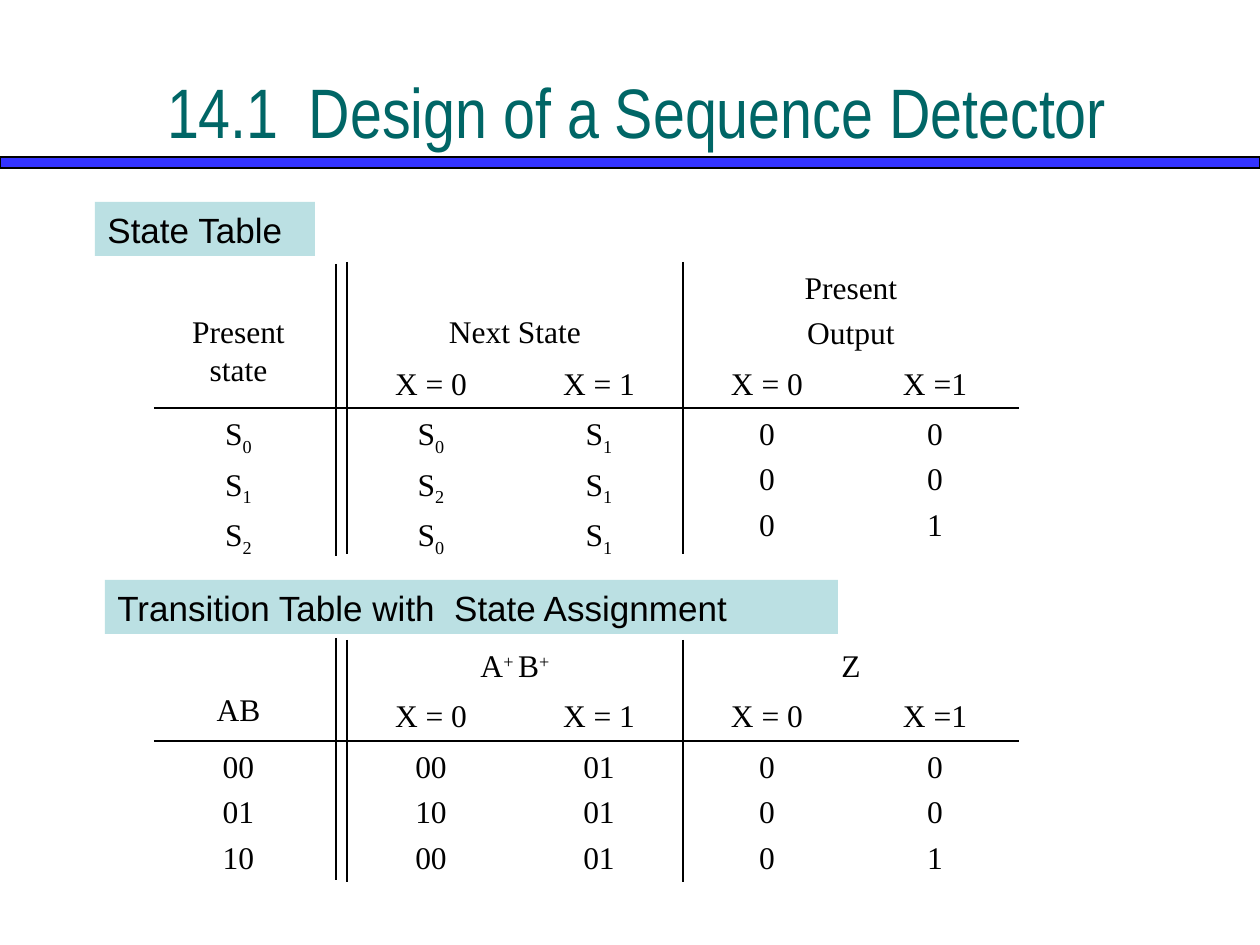
from dataclasses import dataclass
from typing import NamedTuple

from lxml.etree import SubElement
from pptx import Presentation
from pptx.dml.color import RGBColor
from pptx.enum.shapes import MSO_CONNECTOR, MSO_SHAPE
from pptx.enum.text import MSO_ANCHOR, MSO_AUTO_SIZE, PP_ALIGN
from pptx.oxml.ns import qn
from pptx.util import Emu, Pt

BLACK = RGBColor(0x00, 0x00, 0x00)
BLUE = RGBColor(0x33, 0x33, 0xFF)
TEAL = RGBColor(0x00, 0x66, 0x66)
PALE_TEAL = RGBColor(0xBB, 0xE0, 0xE3)

EMU_PER_PX = 914400 / 126
STUB_LEFT, STUB_WIDTH = 154, 169
DOUBLE_RULE, BODY_LEFT, COLUMN_WIDTH = 336, 347, 168
PADDING, LINE_PITCH = 6, 44
SUBSCRIPT, SUPERSCRIPT = -25000, 30000
INPUTS = ("X = 0", "X = 1", "X = 0", "X =1")


class Piece(NamedTuple):
    """A stretch of text with its baseline shift."""
    text: str
    baseline: int = 0


Line = tuple[Piece, ...]


class Area(NamedTuple):
    """A rectangle in px."""
    left: int
    top: int
    width: int
    height: int


@dataclass(frozen=True)
class StateGrid:
    """A ruled table of states: its rows in px and its text."""
    top: int
    inputs_top: int
    rule: int
    bottom: int
    double_rule_shift: int
    stub: str
    stub_height: int
    next_heading: list[Line]
    next_skipped_lines: int
    output_heading: list[Line]
    columns: list[list[Line]]


def px(length: int) -> Emu:
    """Turn px into EMU."""
    return Emu(round(length * EMU_PER_PX))


def plain(*texts: str) -> list[Line]:
    """Make one unshifted line of each text."""
    return [(Piece(text),) for text in texts]


def states(*numbers: int) -> list[Line]:
    """Make one line for each numbered state."""
    return [(Piece("S"), Piece(str(number), SUBSCRIPT)) for number in numbers]


def add_span(para, piece: Piece, font: str, size: int, color: RGBColor = BLACK) -> None:
    """Add one formatted run to a paragraph."""
    span = para.add_run()
    span.text = piece.text
    span.font.name = font
    span.font.size = Pt(size)
    span.font.color.rgb = color
    if piece.baseline:
        span._r.get_or_add_rPr().set("baseline", str(piece.baseline))


def add_title(page, text: str) -> None:
    """Place and format the title placeholder."""
    title = page.shapes.title
    title.left, title.top, title.width, title.height = map(px, Area(38, 32, 1197, 158))
    frame = title.text_frame
    frame.auto_size = MSO_AUTO_SIZE.NONE
    frame.vertical_anchor = MSO_ANCHOR.MIDDLE
    para = frame.paragraphs[0]
    para.alignment = PP_ALIGN.CENTER
    add_span(para, Piece(text), "Arial Narrow", 40, TEAL)


def add_bar(page, area: Area, fill: RGBColor):
    """Draw a filled rectangle without an outline."""
    bar = page.shapes.add_shape(MSO_SHAPE.RECTANGLE, *map(px, area))
    bar.shadow.inherit = False
    bar.fill.solid()
    bar.fill.fore_color.rgb = fill
    bar.line.fill.background()
    return bar


def add_label(page, area: Area, text: str) -> None:
    """Draw a caption on a pale bar."""
    frame = add_bar(page, area, PALE_TEAL).text_frame
    frame.word_wrap = True
    frame.auto_size = MSO_AUTO_SIZE.SHAPE_TO_FIT_TEXT
    frame.vertical_anchor = MSO_ANCHOR.TOP
    para = frame.paragraphs[0]
    para.alignment = PP_ALIGN.LEFT
    add_span(para, Piece(text), "Arial", 20)


def add_cell(page, area: Area, lines: list[Line], skipped_lines: int = 0) -> None:
    """Write centred lines, starting below the skipped ones."""
    box = page.shapes.add_textbox(*map(px, area))
    frame = box.text_frame
    frame.word_wrap = True
    frame.margin_top = px(PADDING + skipped_lines * LINE_PITCH)
    for index, line in enumerate(lines):
        para = frame.add_paragraph() if index else frame.paragraphs[0]
        para.alignment = PP_ALIGN.CENTER
        para.space_before = Pt(4.3 if index else 0)
        for piece in line:
            add_span(para, piece, "Times New Roman", 18)


def add_rule(page, left: int, top: int, right: int, bottom: int) -> None:
    """Draw a thin black line."""
    rule = page.shapes.add_connector(
        MSO_CONNECTOR.STRAIGHT, *map(px, (left, top, right, bottom)))
    rule.line.color.rgb = BLACK
    rule.line.width = Pt(1)
    SubElement(rule._element.spPr, qn("a:effectLst"))


def add_grid(page, grid: StateGrid) -> None:
    """Draw the headings, columns and rules of a state table."""
    lefts = [BODY_LEFT + index * COLUMN_WIDTH for index in range(len(INPUTS))]
    middle, right = lefts[2], lefts[-1] + COLUMN_WIDTH
    body_height = grid.bottom - grid.rule
    heading_height = grid.inputs_top - grid.top

    add_cell(page, Area(STUB_LEFT, grid.top, STUB_WIDTH, grid.stub_height),
             plain(grid.stub), 1)
    add_cell(page, Area(BODY_LEFT, grid.top, 2 * COLUMN_WIDTH, heading_height),
             grid.next_heading, grid.next_skipped_lines)
    add_cell(page, Area(middle, grid.top, 2 * COLUMN_WIDTH, heading_height),
             grid.output_heading)
    for left, text in zip(lefts, INPUTS):
        add_cell(page, Area(left, grid.inputs_top, COLUMN_WIDTH, grid.rule - grid.inputs_top),
                 plain(text))

    add_cell(page, Area(STUB_LEFT, grid.rule, STUB_WIDTH, body_height), grid.columns[0])
    for left, column in zip(lefts, grid.columns[1:]):
        add_cell(page, Area(left, grid.rule, COLUMN_WIDTH, body_height), column)

    add_rule(page, STUB_LEFT, grid.rule, right, grid.rule)
    for x, shift in ((DOUBLE_RULE, grid.double_rule_shift), (BODY_LEFT, 0), (middle, 0)):
        add_rule(page, x, grid.top + shift, x, grid.bottom + shift)


def main() -> None:
    """Build the slide and save it."""
    deck = Presentation()
    deck.slide_width, deck.slide_height = px(1260), px(945)
    page = deck.slides.add_slide(deck.slide_layouts[5])

    outputs = [plain("0", "0", "0"), plain("0", "0", "1")]
    state_table = StateGrid(
        262, 358, 408, 554, 2, "Present state", 146,
        plain("Next State"), 1, plain("Present", "Output"),
        [states(0, 1, 2), states(0, 2, 0), states(1, 1, 1), *outputs])
    transition_table = StateGrid(
        640, 690, 741, 882, -2, "AB", 101,
        [(Piece("A"), Piece("+ ", SUPERSCRIPT), Piece("B"), Piece("+", SUPERSCRIPT))], 0,
        plain("Z"),
        [plain("00", "01", "10"), plain("00", "10", "00"), plain("01", "01", "01"), *outputs])

    underline = add_bar(page, Area(0, 157, 1260, 11), BLUE)
    underline.line.color.rgb = BLACK
    underline.line.width = Pt(0.75)
    add_title(page, "14.1\t Design of a Sequence Detector")
    add_label(page, Area(95, 202, 220, 54), "State Table")
    add_grid(page, state_table)
    add_grid(page, transition_table)
    add_label(page, Area(105, 580, 733, 54), "Transition Table with  State Assignment")
    deck.save("out.pptx")


if __name__ == "__main__":
    main()
